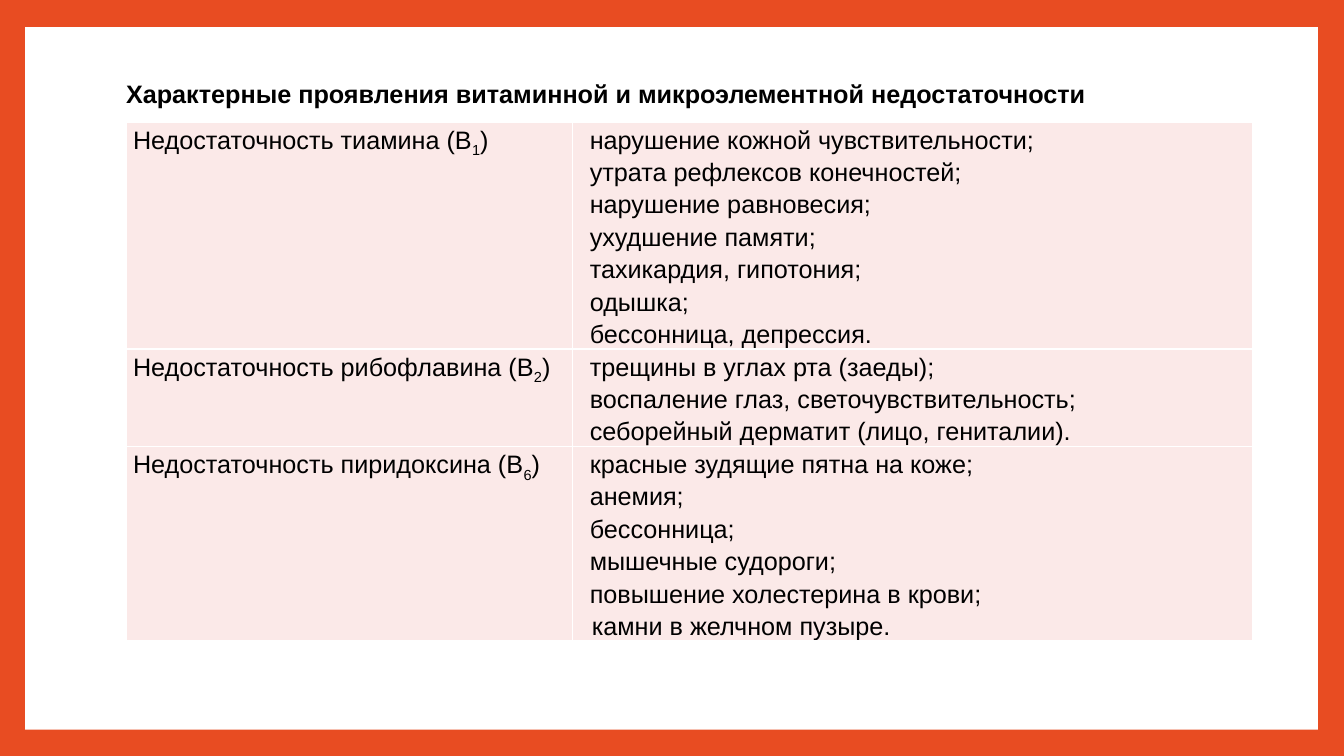
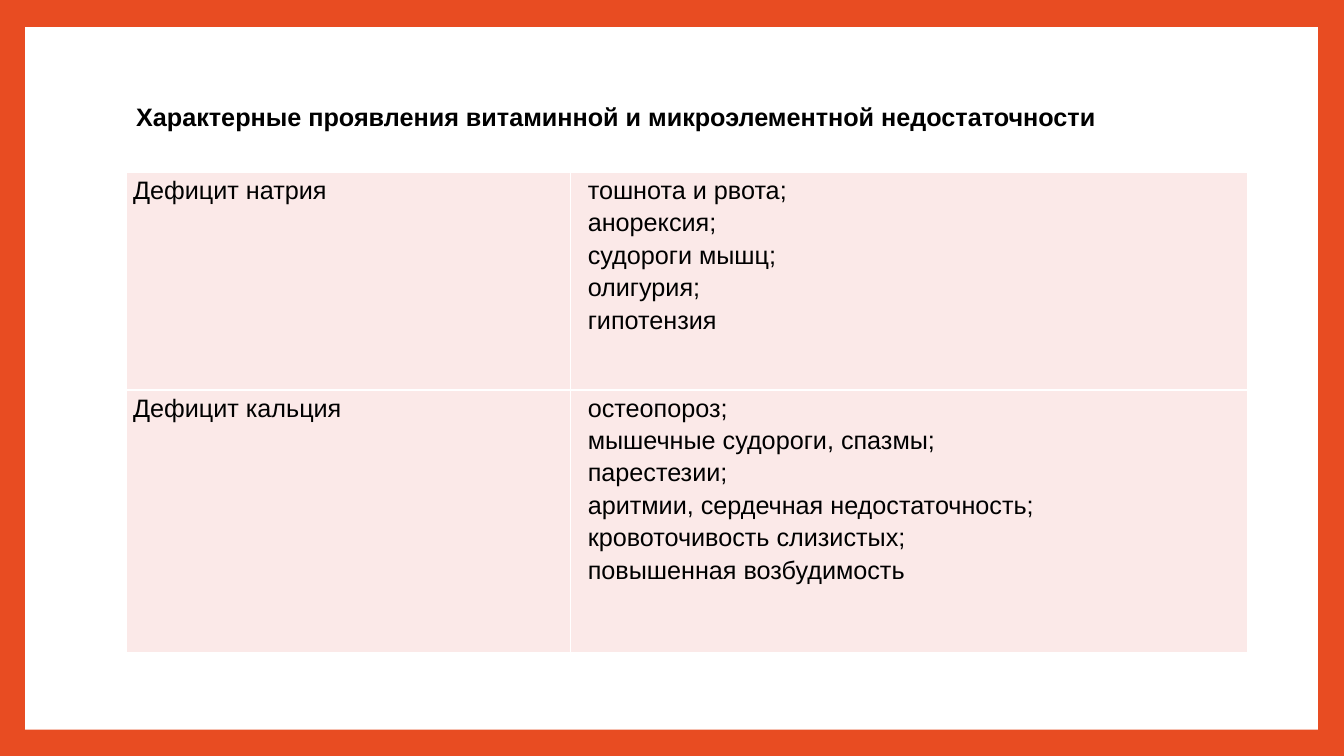
from dataclasses import dataclass
from lxml.etree import SubElement as Sub
from pptx import Presentation as Deck
from pptx.dml.color import RGBColor as Rgb
from pptx.enum.shapes import MSO_SHAPE as Kind
from pptx.enum.text import MSO_ANCHOR as Anchor, MSO_AUTO_SIZE as Fit, PP_ALIGN as Align
from pptx.oxml.ns import qn
from pptx.util import Pt

PX = 9144


@dataclass(frozen=True)
class Theme:
    edge: str = "E84C22"
    paper: str = "FFFFFF"
    cell: str = "FBE9E8"
    ink: str = "000000"
    font: str = "Arial"
    size: int = 18
    rule: int = 1
    tight: float = 0.9
    loose: float = 1.15


def paint(fill, tone):
    fill.solid()
    fill.fore_color.rgb = Rgb.from_string(tone)


def write(para, text, style, bold=False, align=Align.LEFT, gap=1.0, left=0):
    para.alignment, para.line_spacing = align, gap
    para._p.get_or_add_pPr().set("marL", str(left * PX))
    head, _, tail = text.partition("_")
    for part, base in ((head, 0), (tail[:1], -25000), (tail[1:], 0)):
        if not part:
            continue
        run = para.add_run()
        run.text = part
        font = run.font
        font.name, font.size, font.bold = style.font, Pt(style.size), bold
        font.color.rgb = Rgb.from_string(style.ink)
        if base:
            run._r.get_or_add_rPr().set("baseline", str(base))


class Show:
    """Builds framed slides with a title and a table in one style."""

    def __init__(self, style):
        self.style = style
        self.deck = Deck()
        self.deck.slide_width, self.deck.slide_height = 1333 * PX, 750 * PX
        paint(self.deck.slide_master.background.fill, style.edge)
        self.page = None

    def start(self):
        first = self.page is None
        self.page = self.deck.slides.add_slide(self.deck.slide_layouts[5])
        if first:
            self.panel(25, 27, 1282, 697)

    def panel(self, *box):
        shape = self.page.shapes.add_shape(Kind.RECTANGLE, *(n * PX for n in box))
        shape.shadow.inherit = False
        paint(shape.fill, self.style.paper)
        shape.line.fill.background()
        shape.element.nvSpPr.cNvPr.set("id", "50")
        self.deck.slide_master.shapes.element.insert(2, shape.element)

    def title(self, text, left, top):
        shape = self.page.shapes.title
        shape.left, shape.top = left * PX, top * PX
        shape.width, shape.height = 1080 * PX, 148 * PX
        frame = shape.text_frame
        frame.word_wrap, frame.auto_size = True, Fit.NONE
        frame.vertical_anchor = Anchor.MIDDLE
        write(frame.paragraphs[0], text, self.style, bold=True, gap=self.style.tight)

    def table(self, left, top, cols, rows):
        tall = [row[0] for row in rows]
        box = (left, top, sum(cols), sum(tall))
        grid = self.page.shapes.add_table(
            len(rows), len(cols), *(n * PX for n in box)).table
        grid.first_row = grid.horz_banding = False
        for col, wide in zip(grid.columns, cols):
            col.width = wide * PX
        for line, (high, name, signs) in zip(grid.rows, rows):
            line.height = high * PX
            self.cell(line.cells[0], [(name, 0)])
            self.cell(line.cells[1], [
                sign if isinstance(sign, tuple) else (sign, 10) for sign in signs])

    def cell(self, cell, lines):
        cell.margin_left = cell.margin_right = 7 * PX
        cell.margin_top = cell.margin_bottom = 0
        paint(cell.fill, self.style.cell)
        self.rules(cell)
        frame = cell.text_frame
        for n, (text, left) in enumerate(lines):
            para = frame.add_paragraph() if n else frame.paragraphs[0]
            write(para, text, self.style, align=Align.JUSTIFY,
                  gap=self.style.loose, left=left)

    def rules(self, cell):
        props = cell._tc.get_or_add_tcPr()
        for n, side in enumerate(("lnL", "lnR", "lnT", "lnB")):
            line = Sub(props, qn("a:" + side), w=str(Pt(self.style.rule)))
            fill = Sub(line, qn("a:solidFill"))
            Sub(fill, qn("a:srgbClr"), val=self.style.paper)
            props.insert(n, line)

    def save(self):
        self.deck.save("out.pptx")


TITLE = "Характерные проявления витаминной и микроэлементной недостаточности"

VITAMINS = [
    (212, "Недостаточность тиамина (B_1)", [
        "нарушение кожной чувствительности;",
        "утрата рефлексов конечностей;",
        "нарушение равновесия;",
        "ухудшение памяти;",
        "тахикардия, гипотония;",
        "одышка;",
        "бессонница, депрессия."]),
    (90, "Недостаточность рибофлавина (В_2)", [
        "трещины в углах рта (заеды);",
        "воспаление глаз, светочувствительность;",
        "себорейный дерматит (лицо, гениталии)."]),
    (181, "Недостаточность пиридоксина (В_6)", [
        "красные зудящие пятна на коже;",
        "анемия;",
        "бессонница;",
        "мышечные судороги;",
        "повышение холестерина в крови;",
        ("камни в желчном пузыре.", 12)]),
]

MINERALS = [
    (216, "Дефицит натрия", [
        "тошнота и рвота;",
        "анорексия;",
        "судороги мышц;",
        "олигурия;",
        "гипотензия"]),
    (260, "Дефицит кальция", [
        "остеопороз;",
        "мышечные судороги, спазмы;",
        "парестезии;",
        "аритмии, сердечная недостаточность;",
        "кровоточивость слизистых;",
        "повышенная возбудимость"]),
]


def main():
    show = Show(Theme())
    for spot, top, cols, rows in (
            ((115, 21), 121, (443, 674), VITAMINS),
            ((125, 43), 171, (441, 671), MINERALS)):
        show.start()
        show.title(TITLE, *spot)
        show.table(125, top, cols, rows)
    show.save()


if __name__ == "__main__":
    main()
